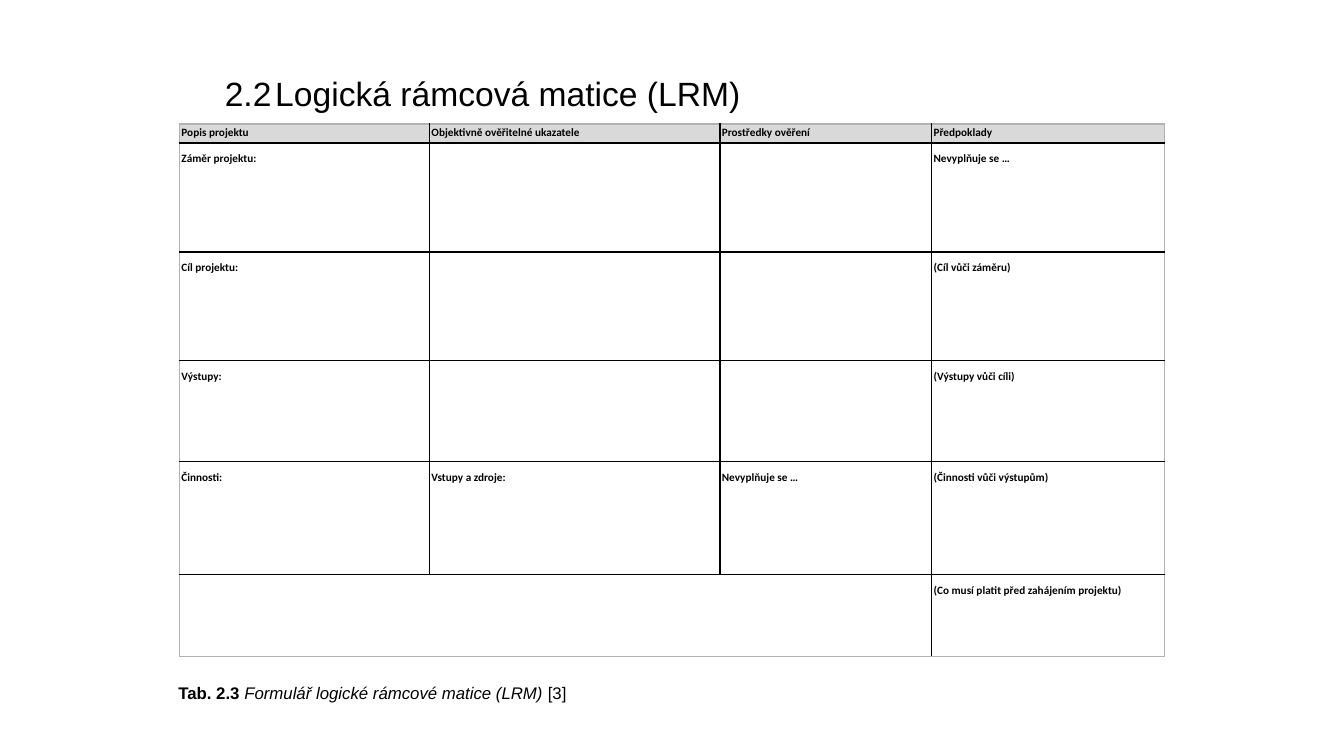
from dataclasses import dataclass

from lxml.etree import SubElement as Sub
from pptx import Presentation
from pptx.dml.color import RGBColor as Rgb
from pptx.enum.text import MSO_ANCHOR as Anchor, PP_ALIGN as Align
from pptx.oxml.ns import qn
from pptx.util import Inches, Pt

BLACK, EDGE, HEAD = "000000", "B2B2B2", "D9D9D9"
COLS = (2.48, 2.88, 2.1, 2.31)
ROWS = (0.19, 1.08, 1.08, 1, 1.12, 0.81)
CELLS = (
    ("Popis projektu", "Objektivně ověřitelné ukazatele", "Prostředky ověření", "Předpoklady"),
    ("Záměr projektu:", "", "", "Nevyplňuje se …"),
    ("Cíl projektu:", "", "", "(Cíl vůči záměru)"),
    ("Výstupy:", "", "", "(Výstupy vůči cíli)"),
    ("Činnosti:", "Vstupy a zdroje:", "Nevyplňuje se …", "(Činnosti vůči výstupům)"),
    ("", "", "", "(Co musí platit před zahájením projektu)"),
)


@dataclass(frozen=True)
class Line:
    hue: str
    width: float


THIN, THICK = Line(BLACK, 1), Line(BLACK, 1.5)
RIM, SLIM = Line(EDGE, 1.5), Line(EDGE, 1)
ACROSS = (RIM, THICK, THIN, THIN, THIN, THIN, SLIM)
DOWN = (SLIM, THICK, THICK, THIN, RIM)


def color(code: str) -> Rgb:
    return Rgb.from_string(code)


def write(para, text: str, size: float, font: str = "Arial",
          bold: bool = False, italic: bool = False) -> None:
    run = para.add_run()
    run.text = text
    face = run.font
    face.name, face.size = font, Pt(size)
    face.bold, face.italic = bold, italic
    face.color.rgb = color(BLACK)


def border(cell, side: str, line: Line) -> None:
    ln = Sub(cell._tc.get_or_add_tcPr(), qn(f"a:ln{side}"), w=str(Pt(line.width)))
    Sub(Sub(ln, qn("a:solidFill")), qn("a:srgbClr"), val=line.hue)


def place(shape, left: float, top: float, width: float, height: float) -> None:
    shape.left, shape.top = Inches(left), Inches(top)
    shape.width, shape.height = Inches(width), Inches(height)


def add_title(slide) -> None:
    title = slide.shapes.title
    place(title, 2.13, 0.67, 8.11, 0.5)
    frame = title.text_frame
    frame.word_wrap = True
    frame.vertical_anchor = Anchor.TOP
    para = frame.paragraphs[0]
    para.alignment = Align.LEFT
    write(para, "2.2\tLogická rámcová matice (LRM)", 24)


def add_matrix(slide) -> None:
    frame = slide.shapes.add_table(
        len(ROWS), len(COLS), Inches(1.78), Inches(1.23),
        Inches(sum(COLS)), Inches(sum(ROWS)))
    table = frame.table
    table.first_row = table.horz_banding = False
    for col, width in zip(table.columns, COLS):
        col.width = Inches(width)
    for row, height in zip(table.rows, ROWS):
        row.height = Inches(height)
    last = len(ROWS) - 1
    table.cell(last, 0).merge(table.cell(last, 2))
    for r, texts in enumerate(CELLS):
        for c, text in enumerate(texts):
            cell = table.cell(r, c)
            cell.margin_left = cell.margin_right = Inches(0.02)
            cell.margin_top = cell.margin_bottom = Inches(0.02)
            right = DOWN[3] if cell.is_merge_origin else DOWN[c + 1]
            if not cell.is_spanned:
                border(cell, "L", DOWN[c])
                border(cell, "R", right)
            border(cell, "T", ACROSS[r])
            border(cell, "B", ACROSS[r + 1])
            if r == 0:
                cell.fill.solid()
                cell.fill.fore_color.rgb = color(HEAD)
            else:
                cell.fill.background()
            if text:
                para = cell.text_frame.paragraphs[0]
                para.line_spacing = 1.5 if r else 1.0
                write(para, text, 8, font="Calibri", bold=True)


def add_note(slide) -> None:
    box = slide.shapes.add_textbox(
        Inches(1.67), Inches(6.72), Inches(4.08), Inches(0.61))
    para = box.text_frame.paragraphs[0]
    write(para, "Tab. 2.3 ", 12, bold=True)
    write(para, "Formulář logické rámcové matice (LRM) ", 12, italic=True)
    write(para, "[3]", 12)


def main() -> None:
    deck = Presentation()
    deck.slide_width, deck.slide_height = Inches(13.33), Inches(7.5)
    slide = deck.slides.add_slide(deck.slide_layouts[5])
    add_title(slide)
    add_matrix(slide)
    add_note(slide)
    deck.save("out.pptx")


if __name__ == "__main__":
    main()
